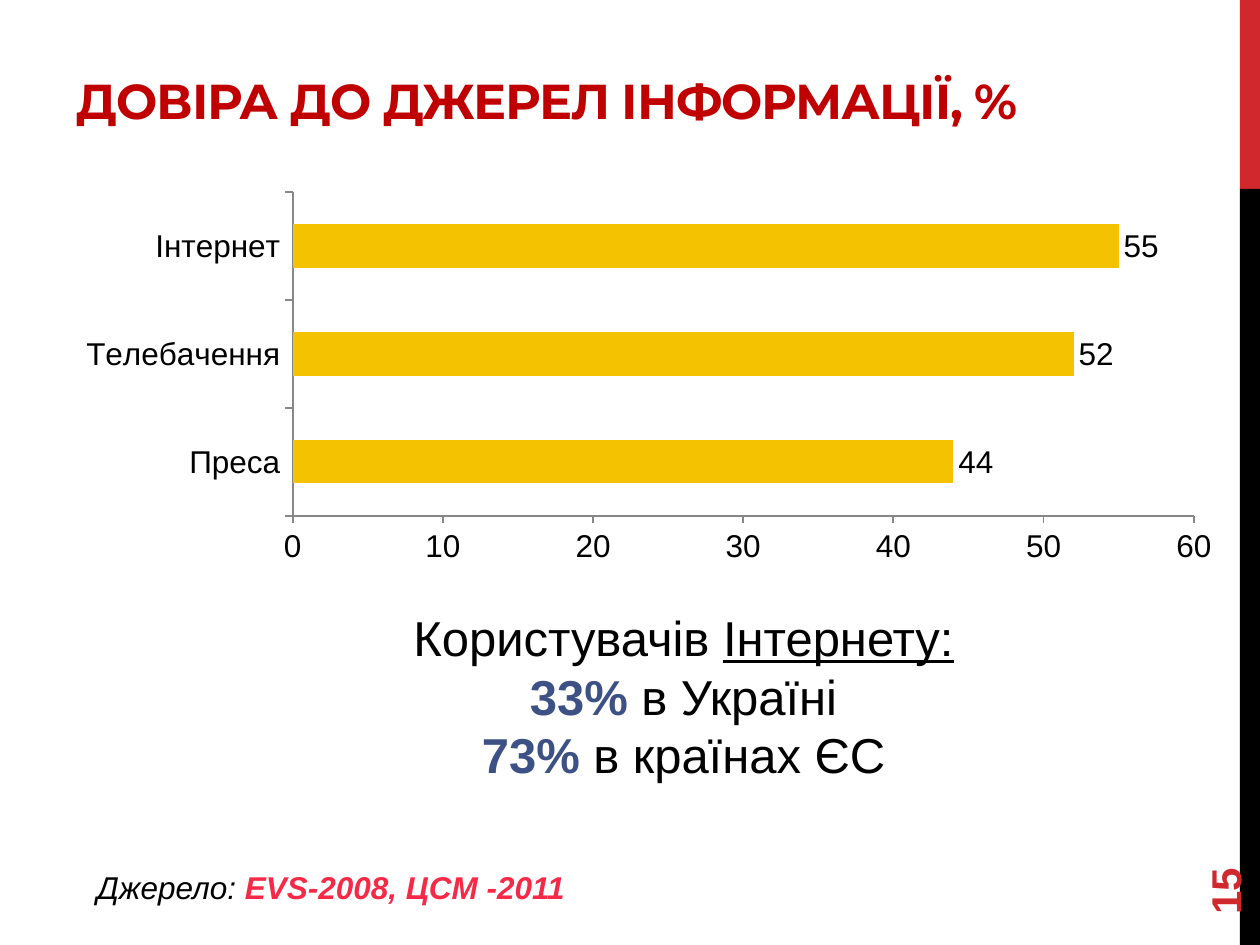
from dataclasses import dataclass

from lxml.etree import SubElement
from pptx import Presentation
from pptx.chart.data import CategoryChartData
from pptx.dml.color import RGBColor as RGB
from pptx.enum.chart import XL_CHART_TYPE as Chart
from pptx.enum.chart import XL_LABEL_POSITION as LabelPos
from pptx.enum.chart import XL_TICK_MARK as Tick
from pptx.enum.shapes import MSO_SHAPE as Shape
from pptx.enum.text import MSO_ANCHOR as Anchor
from pptx.enum.text import MSO_AUTO_SIZE as Fit
from pptx.enum.text import PP_ALIGN as Align
from pptx.oxml.ns import qn
from pptx.util import Inches, Pt


@dataclass(frozen=True)
class Theme:
    heading: str = "Montserrat"
    body: str = "Arial"
    large: int = 28
    medium: int = 24
    small: int = 18
    ink: str = "000000"
    title: str = "C00000"
    accent: str = "D1282E"
    bar: str = "F5C201"
    axis: str = "878787"
    figure: str = "3D5185"
    source: str = "F62A47"


def add_run(p, text, *, font, size, color, bold=False, italic=False,
            underline=False, spacing=None):
    r = p.add_run()
    r.text = text
    f = r.font
    f.name, f.size, f.color.rgb = font, Pt(size), RGB.from_string(color)
    f.bold, f.italic, f.underline = bold, italic, underline
    if spacing is not None:
        r._r.get_or_add_rPr().set("spc", str(round(spacing * 100)))


class Deck:
    COLS, ROWS = 100, 75

    def __init__(self, theme):
        self.theme = theme
        self.prs = Presentation()
        self.prs.slide_width, self.prs.slide_height = Inches(10), Inches(7.5)
        self.s = None

    def box(self, col, row, cols, rows):
        dx = self.prs.slide_width / self.COLS
        dy = self.prs.slide_height / self.ROWS
        return [round(v) for v in (col * dx, row * dy, cols * dx, rows * dy)]

    def add_slide(self):
        self.s = self.prs.slides.add_slide(self.prs.slide_layouts[5])

    def title(self, text, *grid):
        sp = self.s.shapes.title
        sp.left, sp.top, sp.width, sp.height = self.box(*grid)
        tf = sp.text_frame
        tf.auto_size, tf.vertical_anchor = Fit.NONE, Anchor.BOTTOM
        p = tf.paragraphs[0]
        p.alignment = Align.LEFT
        add_run(p, text, font=self.theme.heading, size=self.theme.large,
                color=self.theme.title, bold=True, spacing=-0.6)

    def band(self, color, *grid):
        sp = self.s.shapes.add_shape(Shape.RECTANGLE, *self.box(*grid))
        sp.shadow.inherit = False
        sp.fill.solid()
        sp.fill.fore_color.rgb = RGB.from_string(color)
        sp.line.fill.background()

    def text(self, lines, *grid, size, align=Align.LEFT, anchor=Anchor.TOP,
             rotation=0):
        sp = self.s.shapes.add_textbox(*self.box(*grid))
        sp.rotation = rotation
        tf = sp.text_frame
        tf.word_wrap, tf.vertical_anchor = True, anchor
        for i, line in enumerate(lines):
            p = tf.add_paragraph() if i else tf.paragraphs[0]
            p.alignment = align
            for text, style in line:
                base = dict(font=self.theme.body, size=size, color=self.theme.ink)
                add_run(p, text, **(base | style))

    def bar_chart(self, values, *grid, top, step, plot):
        data = CategoryChartData()
        data.categories = list(values)
        data.add_series("Series 1", list(values.values()))
        chart = self.s.shapes.add_chart(
            Chart.BAR_CLUSTERED, *self.box(*grid), data).chart
        chart.has_legend = chart.has_title = False
        f = chart.font
        f.name, f.size = self.theme.body, Pt(self.theme.small)
        f.color.rgb = RGB.from_string(self.theme.ink)

        for axis in (chart.category_axis, chart.value_axis):
            axis.has_major_gridlines = False
            axis.major_tick_mark = Tick.OUTSIDE
            axis.format.line.color.rgb = RGB.from_string(self.theme.axis)
            axis.format.line.width = Pt(1)
        axis = chart.value_axis
        axis.minimum_scale, axis.maximum_scale, axis.major_unit = 0, top, step

        bars = chart.plots[0]
        bars.gap_width, bars.vary_by_categories = 150, False
        fill = bars.series[0].format.fill
        fill.solid()
        fill.fore_color.rgb = RGB.from_string(self.theme.bar)
        bars.has_data_labels = True
        bars.data_labels.show_value = True
        bars.data_labels.position = LabelPos.OUTSIDE_END
        self.place_plot(chart, plot)

    def place_plot(self, chart, plot):
        area = chart._chartSpace.chart.plotArea
        layout = area.find(qn("c:layout"))
        if layout is None:
            layout = SubElement(area, qn("c:layout"))
            area.insert(0, layout)
        manual = SubElement(layout, qn("c:manualLayout"))
        settings = [("layoutTarget", "inner"), ("xMode", "edge"),
                    ("yMode", "edge"), *zip("xywh", plot)]
        for name, value in settings:
            SubElement(manual, qn(f"c:{name}")).set("val", str(value))


def main():
    t = Theme()
    deck = Deck(t)
    deck.add_slide()
    deck.band(t.accent, 98.4, 0, 1.6, 15)
    deck.band(t.ink, 98.4, 15, 1.6, 60)
    deck.title("ДОВІРА ДО ДЖЕРЕЛ ІНФОРМАЦІЇ, %", 5.1, 2.9, 90, 7.9)
    deck.bar_chart({"Преса": 44, "Телебачення": 52, "Інтернет": 55},
                   5, 14.7, 93, 30.7, top=60, step=10,
                   plot=(0.196, 0.018, 0.769, 0.837))

    figure = dict(color=t.figure, bold=True)
    deck.text([[("Користувачів ", {}), ("Інтернету:", dict(underline=True))],
               [("33%", figure), (" в Україні", {})],
               [("73% ", figure), ("в країнах ЄС", {})]],
              14.1, 47.7, 80.3, 15.1, size=t.large, align=Align.CENTER)
    deck.text([[("Джерело: ", dict(italic=True)),
                ("EVS-2008, ЦСМ -2011",
                 dict(color=t.source, bold=True, italic=True))]],
              6.7, 68.4, 78, 4, size=t.small)
    deck.text([[("15", dict(color=t.accent, bold=True))]],
              90, 64.4, 14.4, 4, size=t.medium, anchor=Anchor.MIDDLE,
              rotation=270)
    deck.prs.save("out.pptx")


if __name__ == "__main__":
    main()
